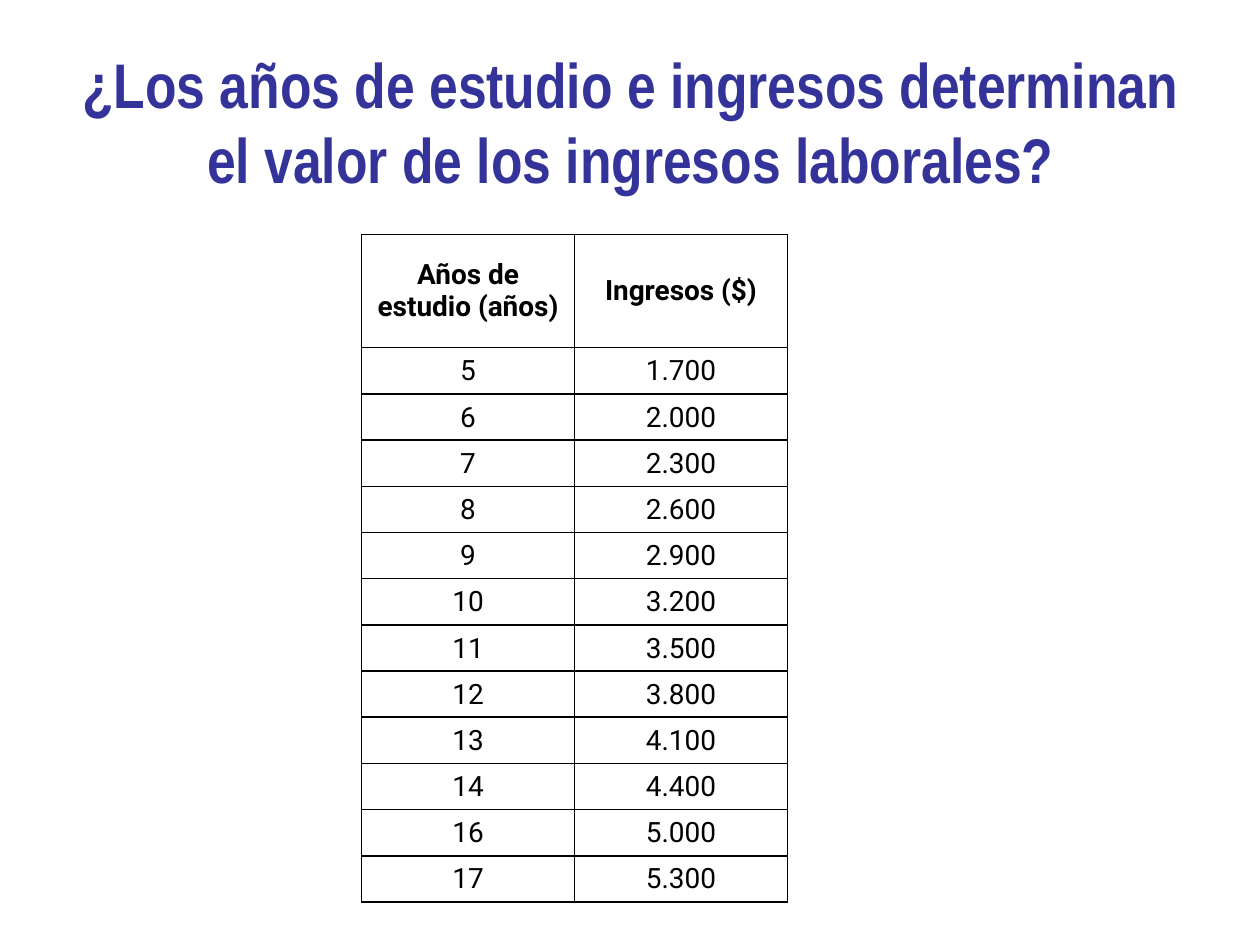
import pptx
import pptx.util
import pptx.dml.color
import pptx.enum.text
import pptx.oxml
import pptx.oxml.ns

Inches = pptx.util.Inches
Align = pptx.enum.text.PP_ALIGN
Anchor = pptx.enum.text.MSO_ANCHOR

HEAD = ("Años de estudio (años)", "Ingresos ($)")
DATA = [
    ("5", "1.700"), ("6", "2.000"), ("7", "2.300"), ("8", "2.600"),
    ("9", "2.900"), ("10", "3.200"), ("11", "3.500"), ("12", "3.800"),
    ("13", "4.100"), ("14", "4.400"), ("16", "5.000"), ("17", "5.300"),
]


def color(code):
    return pptx.dml.color.RGBColor.from_string(code)


def write(frame, text, font, size, code, bold):
    """Put one centred run in the frame's first paragraph."""
    para = frame.paragraphs[0]
    para.alignment = Align.CENTER
    run = para.add_run()
    run.text = text
    run.font.name = font
    run.font.size = pptx.util.Pt(size)
    run.font.bold = bold
    run.font.color.rgb = color(code)


def border(cell, code, width):
    """Line all four sides; lines must come before the fill in tcPr."""
    props = cell._tc.get_or_add_tcPr()
    for i, side in enumerate(("lnL", "lnR", "lnT", "lnB")):
        line = pptx.oxml.parse_xml(
            f'<a:{side} {pptx.oxml.ns.nsdecls("a")} w="{pptx.util.Pt(width)}">'
            f'<a:solidFill><a:srgbClr val="{code}"/></a:solidFill></a:{side}>')
        props.insert(i, line)


def add_title(slide, left, top, width, height):
    title = slide.shapes.title
    title.left, title.top = Inches(left), Inches(top)
    title.width, title.height = Inches(width), Inches(height)
    frame = title.text_frame
    frame.word_wrap = True
    frame.auto_size = pptx.enum.text.MSO_AUTO_SIZE.NONE
    frame.vertical_anchor = Anchor.BOTTOM
    write(frame, "¿Los años de estudio e ingresos determinan "
          "el valor de los ingresos laborales?",
          "Arial Narrow", 36, "333399", True)


def add_income(slide, left, top, width, height):
    """Place the table: a tall header over equal data rows."""
    rows = [HEAD] + DATA
    table = slide.shapes.add_table(
        len(rows), len(HEAD), Inches(left), Inches(top),
        Inches(width), Inches(height)).table
    table.first_row = table.horz_banding = False
    tall = 0.9
    for r, row in enumerate(rows):
        first = r == 0
        table.rows[r].height = Inches(
            tall if first else (height - tall) / len(DATA))
        for c, text in enumerate(row):
            cell = table.cell(r, c)
            cell.fill.background()
            border(cell, "000000", 1)
            cell.vertical_anchor = Anchor.MIDDLE if first else Anchor.BOTTOM
            write(cell.text_frame, text, "Roboto", 16, "000000", first)


def main():
    deck = pptx.Presentation()
    deck.slide_width, deck.slide_height = Inches(10), Inches(7.5)
    slide = deck.slides.add_slide(deck.slide_layouts[5])
    add_title(slide, 0.43, 0.36, 9.15, 1.25)
    add_income(slide, 2.87, 1.86, 3.38, 5.3)
    deck.save("out.pptx")


if __name__ == "__main__":
    main()
